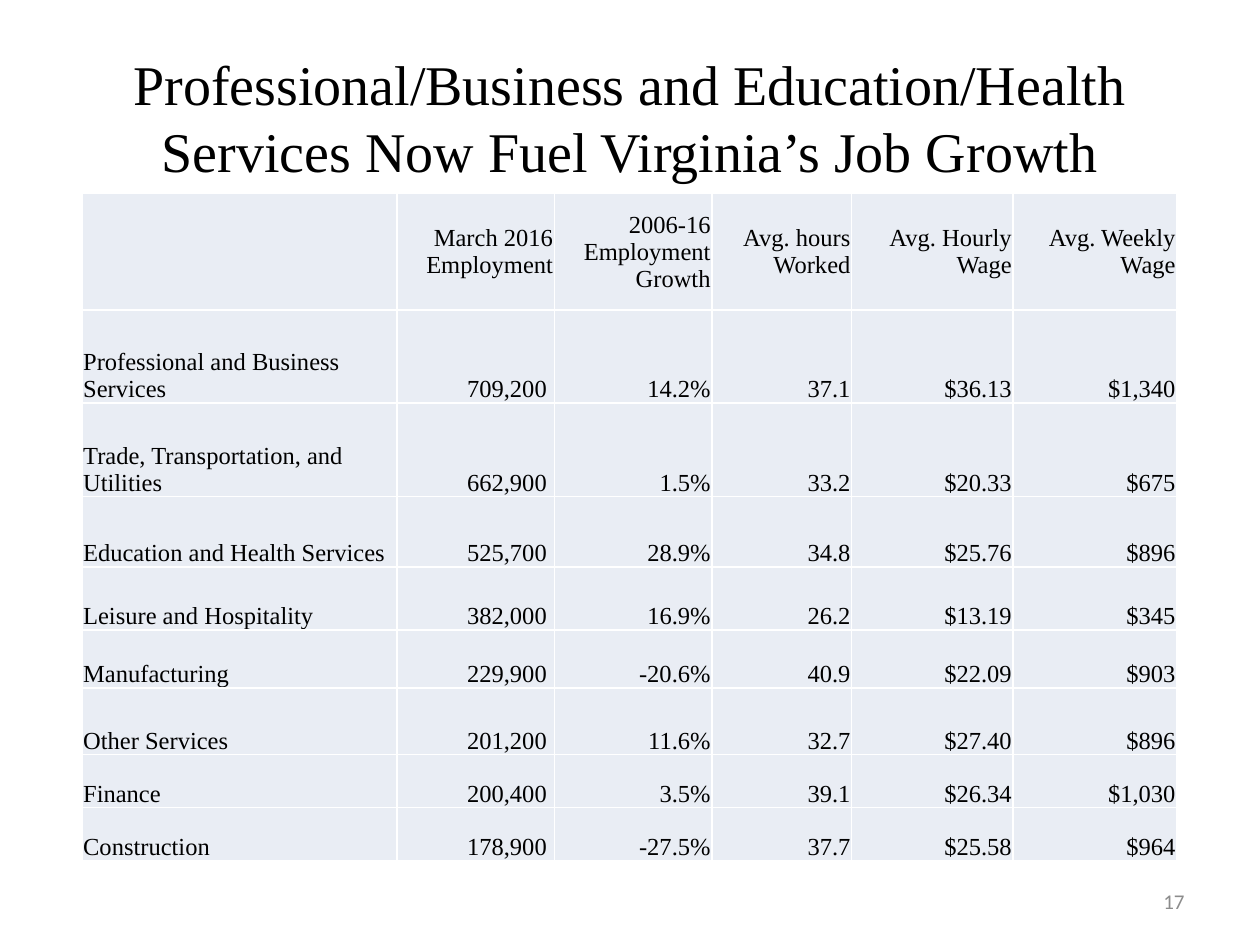
import pptx
import pptx.dml.color
import pptx.enum.text
import pptx.oxml
import pptx.oxml.ns
import pptx.util

ALIGN = pptx.enum.text.PP_ALIGN
ANCHOR = pptx.enum.text.MSO_ANCHOR
WIDE, HIGH = 10, 7.5
HUES = {"ink": "000000", "cell": "E9EDF4", "rule": "FFFFFF", "page": "8C8C8C"}
SERIF = "Times New Roman"
COLS = [2.5, 1.25, 1.25, 1.11, 1.28, 1.3]
ROWS = [0.93, 0.74, 0.74, 0.56, 0.5, 0.46, 0.53, 0.42, 0.42]
HEADS = ["", "March 2016 Employment", "2006-16 Employment Growth",
         "Avg. hours Worked", "Avg. Hourly Wage", "Avg. Weekly Wage"]
JOBS = [
    ["Professional and Business Services", "709,200", "14.2%", "37.1", "$36.13", "$1,340"],
    ["Trade, Transportation, and Utilities", "662,900", "1.5%", "33.2", "$20.33", "$675"],
    ["Education and Health Services", "525,700", "28.9%", "34.8", "$25.76", "$896"],
    ["Leisure and Hospitality", "382,000", "16.9%", "26.2", "$13.19", "$345"],
    ["Manufacturing", "229,900", "-20.6%", "40.9", "$22.09", "$903"],
    ["Other Services", "201,200", "11.6%", "32.7", "$27.40", "$896"],
    ["Finance", "200,400", "3.5%", "39.1", "$26.34", "$1,030"],
    ["Construction", "178,900", "-27.5%", "37.7", "$25.58", "$964"],
]


def tint(name):
    """Return a named colour."""
    return pptx.dml.color.RGBColor.from_string(HUES[name])


def write(frame, text, size=14, font=SERIF, hue="ink", align=ALIGN.RIGHT):
    """Put formatted text in a text frame."""
    frame.word_wrap = True
    line = frame.paragraphs[0]
    line.alignment = align
    run = line.add_run()
    run.text = text
    run.font.size = pptx.util.Pt(size)
    run.font.name = font
    run.font.color.rgb = tint(hue)


def add_title(slide, text):
    """Fill and place the title placeholder."""
    title = slide.shapes.title
    title.left, title.width = (pptx.util.Inches(WIDE * x) for x in (0.05, 0.9))
    title.top, title.height = (pptx.util.Inches(HIGH * y) for y in (0.04, 1 / 6))
    title.text_frame.vertical_anchor = ANCHOR.MIDDLE
    write(title.text_frame, text, size=32, align=ALIGN.CENTER)


def add_page(slide, text):
    """Add the page number at the lower right."""
    spot = [pptx.util.Inches(n) for n in (7.17, 6.95, 2.33, 0.4)]
    frame = slide.shapes.add_textbox(*spot).text_frame
    frame.vertical_anchor = ANCHOR.MIDDLE
    write(frame, text, size=12, font="Calibri", hue="page")


def rule_cell(cell):
    """Draw thin rules on all four sides of a cell."""
    props = cell._tc.get_or_add_tcPr()
    for side in ("lnL", "lnR", "lnT", "lnB"):
        props.append(pptx.oxml.parse_xml(
            f'<a:{side} {pptx.oxml.ns.nsdecls("a")} w="12700"><a:solidFill>'
            f'<a:srgbClr val="{HUES["rule"]}"/></a:solidFill></a:{side}>'))


def fill_cell(cell, text, row, col):
    """Style one cell and write its text."""
    rule_cell(cell)
    cell.fill.solid()
    cell.fill.fore_color.rgb = tint("cell")
    inset = pptx.util.Inches(0.01)
    cell.margin_left = cell.margin_top = cell.margin_right = inset
    cell.margin_bottom = 0
    if row and col == 1:
        cell.margin_right = pptx.util.Inches(0.06)
    cell.vertical_anchor = ANCHOR.BOTTOM if row else ANCHOR.MIDDLE
    if text:
        write(cell.text_frame, text, align=ALIGN.RIGHT if col else ALIGN.LEFT)


def add_grid(slide, data):
    """Add the table of jobs and wages."""
    spot = [pptx.util.Inches(n) for n in (0.65, 1.53, sum(COLS), sum(ROWS))]
    grid = slide.shapes.add_table(len(ROWS), len(COLS), *spot).table
    grid.first_row = grid.horz_banding = False
    for col, width in zip(grid.columns, COLS):
        col.width = pptx.util.Inches(width)
    for row, height in zip(grid.rows, ROWS):
        row.height = pptx.util.Inches(height)
    for r, line in enumerate(data):
        for c, text in enumerate(line):
            fill_cell(grid.cell(r, c), text, r, c)


def main():
    """Build and save the slide."""
    deck = pptx.Presentation()
    deck.slide_width = pptx.util.Inches(WIDE)
    deck.slide_height = pptx.util.Inches(HIGH)
    slide = deck.slides.add_slide(deck.slide_layouts[5])
    add_title(slide, "Professional/Business and Education/Health "
                     "Services Now Fuel Virginia’s Job Growth")
    add_page(slide, "17")
    add_grid(slide, [HEADS] + JOBS)
    deck.save("out.pptx")


if __name__ == "__main__":
    main()
